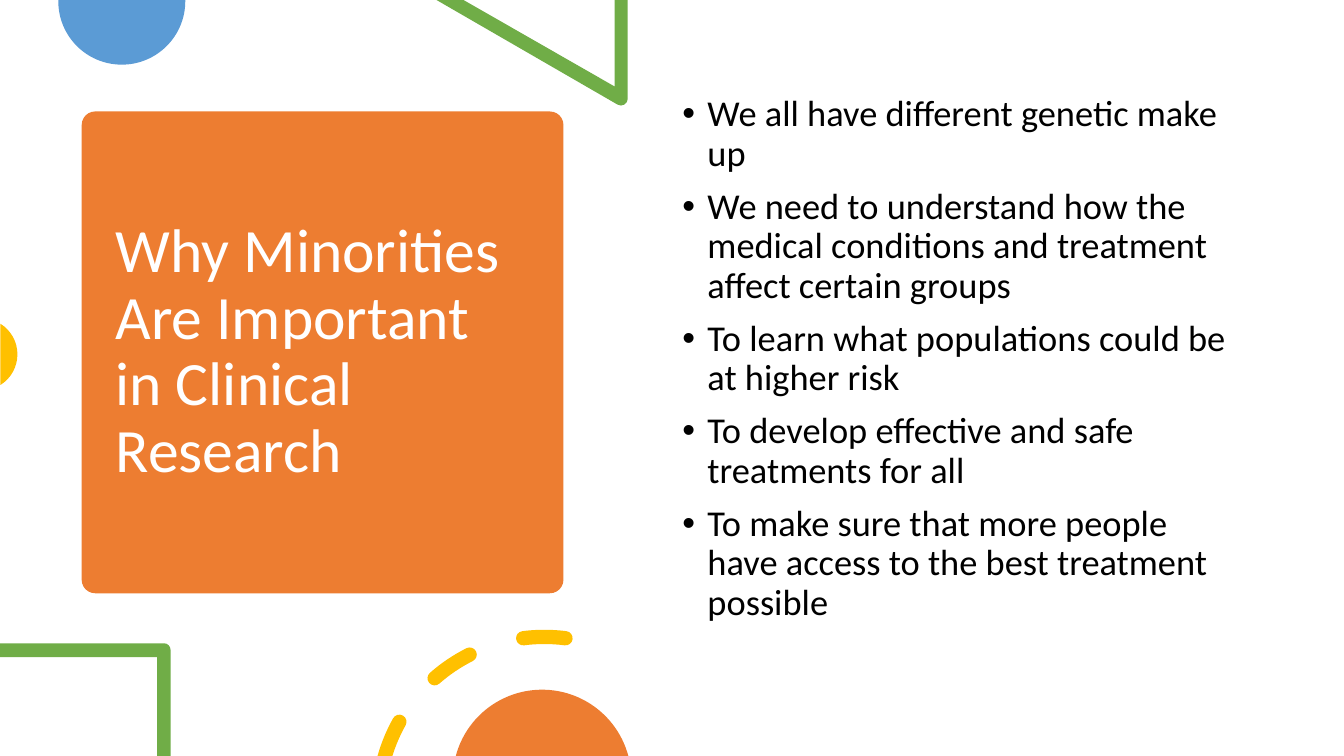
"""Build a slide on why minorities are important in clinical research."""
import math

import lxml.etree
import pptx
import pptx.dml.color
import pptx.enum.shapes
import pptx.enum.text
import pptx.oxml.ns
import pptx.util

Cm = pptx.util.Cm
RGBColor = pptx.dml.color.RGBColor
qn = pptx.oxml.ns.qn

ORANGE = RGBColor(0xED, 0x7D, 0x31)
BLUE = RGBColor(0x5B, 0x9B, 0xD5)
GREEN = RGBColor(0x70, 0xAD, 0x47)
YELLOW = RGBColor(0xFF, 0xC0, 0x00)
WHITE = RGBColor(0xFF, 0xFF, 0xFF)
BLACK = RGBColor(0x00, 0x00, 0x00)

SLIDE_WIDTH = 33.87
SLIDE_HEIGHT = 19.05

TITLE = "Why Minorities Are Important in Clinical Research"
REASONS = [
    "We all have different genetic make up",
    "We need to understand how the medical conditions and treatment affect certain groups",
    "To learn what populations could be at higher risk",
    "To develop effective and safe treatments for all",
    "To make sure that more people have access to the best treatment possible",
]


def polar(center, radius, angle):
    turn = math.radians(angle)
    return center[0] + radius * math.cos(turn), center[1] + radius * math.sin(turn)


def arc(center, radius, start, end, curves=1):
    step = (end - start) / curves
    handle = 4 / 3 * math.tan(math.radians(step) / 4)
    reach = radius * math.hypot(1, handle)
    lean = math.degrees(math.atan(handle))
    segments = [[polar(center, radius, start)]]
    for i in range(curves):
        first, last = start + i * step, start + (i + 1) * step
        segments.append([polar(center, reach, first + lean),
                         polar(center, reach, last - lean),
                         polar(center, radius, last)])
    return segments


def corners(*points):
    return [[point] for point in points]


def dash(center, radius, half_width, start, end):
    outer, inner = radius + half_width, radius - half_width
    drop = center[1] - SLIDE_HEIGHT
    cuts = [180 + math.degrees(math.asin(drop / edge)) for edge in (outer, inner)]
    contour = arc(center, outer, max(start, cuts[0]), end)
    contour += arc(polar(center, radius, end), half_width, end, end + 180, 2)[1:]
    contour += arc(center, inner, end, max(start, cuts[1]))[1:]
    if start > max(cuts):
        contour += arc(polar(center, radius, start), half_width, start + 180, start + 360, 2)[1:]
    return contour


def write(paragraph, text, *, size, color, font="Calibri", space_before=0, bullet=False):
    run = paragraph.add_run()
    run.text = text
    run.font.name = font
    run.font.size = pptx.util.Pt(size)
    run.font.color.rgb = color
    paragraph.alignment = pptx.enum.text.PP_ALIGN.LEFT
    paragraph.line_spacing = 0.9
    paragraph.space_before = pptx.util.Pt(space_before)
    if bullet:
        properties = paragraph._p.get_or_add_pPr()
        properties.set("marL", str(Cm(0.635)))
        properties.set("indent", str(-Cm(0.635)))
        for tag, name, value in (("a:buFont", "typeface", "Arial"), ("a:buChar", "char", "•")):
            lxml.etree.SubElement(properties, qn(tag)).set(name, value)


class SlideBuilder:
    """Hold the slide and its style, and draw each kind of element."""

    def __init__(self, presentation):
        self.slide = presentation.slides.add_slide(presentation.slide_layouts[1])
        self.shapes = self.slide.shapes

    def paint(self, shape, color):
        shape.shadow.inherit = False
        shape.fill.solid()
        shape.fill.fore_color.rgb = color
        shape.line.fill.background()

    def card(self, left, top, width, height, color):
        kind = pptx.enum.shapes.MSO_SHAPE.ROUNDED_RECTANGLE
        shape = self.shapes.add_shape(kind, Cm(left), Cm(top), Cm(width), Cm(height))
        shape.adjustments[0] = 0.028
        self.paint(shape, color)

    def outline(self, color, *contours):
        builder = None
        for contour in contours:
            start, *points = [(Cm(x), Cm(y)) for segment in contour for x, y in segment]
            if builder:
                builder.move_to(*start)
            else:
                builder = self.shapes.build_freeform(*start, scale=1.0)
            builder.add_line_segments(points, close=True)
        shape = builder.convert_to_shape()
        lines = iter(list(shape.element.iter(qn("a:lnTo"))))
        for segment in (segment for contour in contours for segment in contour[1:]):
            line = next(lines)
            if len(segment) == 3:
                curve = lxml.etree.Element(qn("a:cubicBezTo"))
                line.addprevious(curve)
                for part in (line, next(lines), next(lines)):
                    curve.append(part[0])
                    part.getparent().remove(part)
        self.paint(shape, color)

    def placeholder(self, index, box, texts, anchor, **text_format):
        shape = self.slide.placeholders[index]
        shape.left, shape.top, shape.width, shape.height = map(Cm, box)
        shape.element.getparent().append(shape.element)
        frame = shape.text_frame
        frame.word_wrap = True
        frame.auto_size = pptx.enum.text.MSO_AUTO_SIZE.NONE
        frame.vertical_anchor = anchor
        for position, text in enumerate(texts):
            paragraph = frame.add_paragraph() if position else frame.paragraphs[0]
            write(paragraph, text, **text_format)


def main():
    presentation = pptx.Presentation()
    presentation.slide_width = Cm(SLIDE_WIDTH)
    presentation.slide_height = Cm(SLIDE_HEIGHT)
    builder = SlideBuilder(presentation)
    anchor = pptx.enum.text.MSO_ANCHOR

    builder.card(2.06, 2.81, 12.14, 12.14, ORANGE)
    builder.placeholder(0, (2.66, 3.09, 10.95, 11.58), [TITLE], anchor.MIDDLE, size=44, color=WHITE)

    builder.outline(BLUE, corners((4.67, 0), (1.47, 0)) + arc((3.07, 0.03), 1.6, 180, 0, 2))
    triangle = corners((15.82, 0), (15.49, 0), (15.49, 2.18), (11.68, 0), (11, 0))
    builder.outline(GREEN, triangle + arc((15.65, 2.49), 0.17, 120, 0, 2))
    builder.outline(YELLOW, arc((-0.47, 8.93), 0.91, -58, 58, 2))

    builder.placeholder(1, (16.94, 2.28, 14.6, 13.59), REASONS, anchor.TOP,
                        size=26, color=BLACK, space_before=10, bullet=True)

    frame = corners((0, 16.21), (0, 16.56), (3.96, 16.56), (3.96, SLIDE_HEIGHT), (4.3, SLIDE_HEIGHT))
    builder.outline(GREEN, frame + arc((4.13, 16.38), 0.17, 0, -90))
    middles = [270 - 34 * i for i in reversed(range(3))]
    builder.outline(YELLOW, *[dash((13.72, 20.24), 4.19, 0.18, m - 7.3, m + 7.3) for m in middles])
    builder.outline(ORANGE, arc((13.66, 19.63), 2.25, 195, 345, 2))

    presentation.save("out.pptx")


if __name__ == "__main__":
    main()
